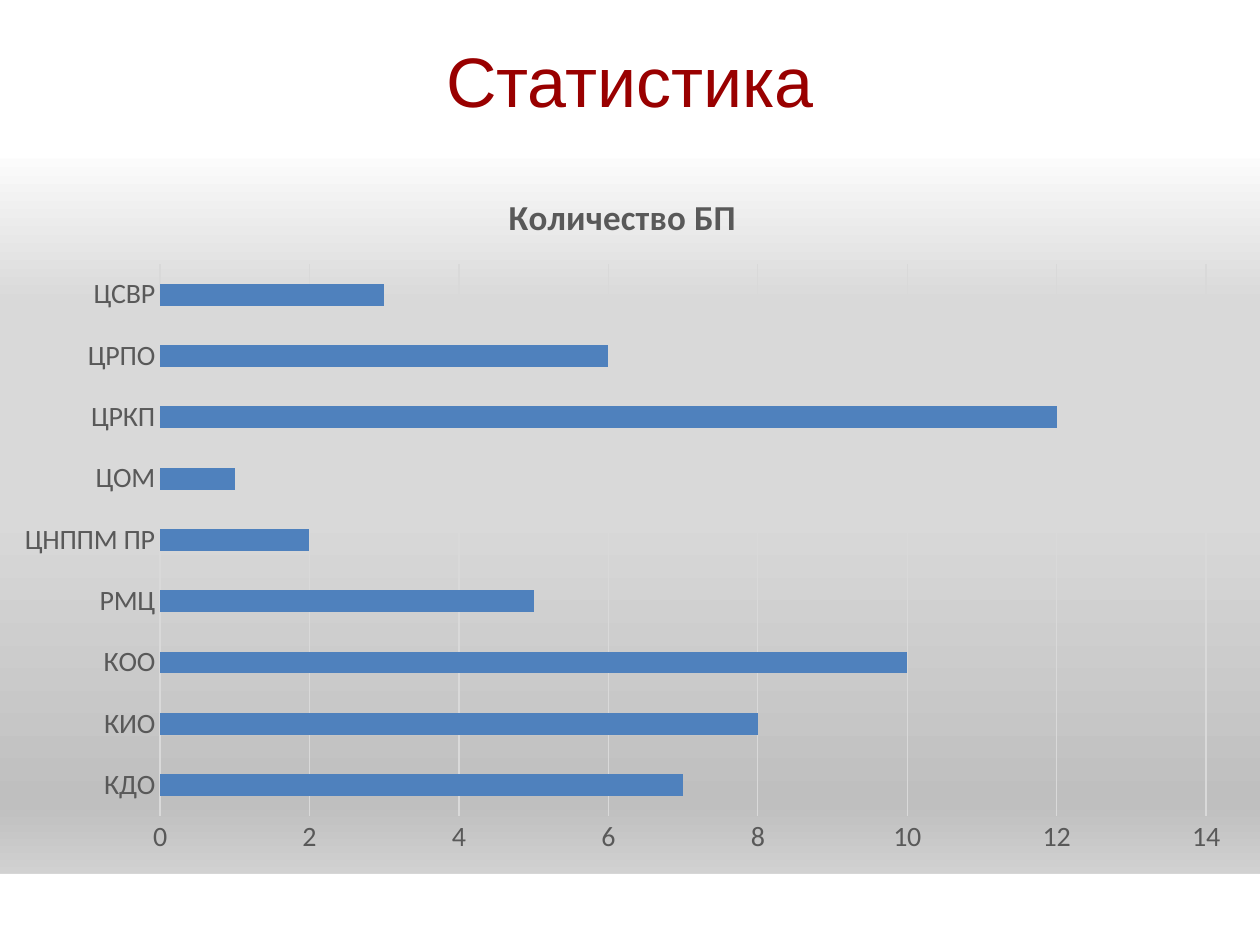
from lxml.etree import SubElement
from pptx import Presentation
from pptx.chart.data import CategoryChartData
from pptx.dml.color import RGBColor
from pptx.enum.chart import XL_CHART_TYPE as ChartType, XL_TICK_MARK as TickMark
from pptx.enum.shapes import MSO_SHAPE as Shape
from pptx.enum.text import MSO_ANCHOR as Anchor, PP_ALIGN as Align
from pptx.oxml import parse_xml
from pptx.oxml.ns import nsdecls, qn
from pptx.util import Pt

PX = 914400 / 126
WHITE = RGBColor(0xFF, 0xFF, 0xFF)
DARK_RED = RGBColor(0x99, 0x00, 0x00)
BLUE = RGBColor(0x4F, 0x81, 0xBD)
GREY_TEXT = RGBColor(0x59, 0x59, 0x59)
GRID_GREY = RGBColor(0xD9, 0xD9, 0xD9)
SILVER = RGBColor(0xBF, 0xBF, 0xBF)
PALE_GREY = RGBColor(0xE6, 0xE6, 0xE6)

BACKGROUND_STOPS = [(0, WHITE), (15, WHITE), (32, GRID_GREY),
                    (54, GRID_GREY), (85, SILVER), (100, PALE_GREY)]
PROGRAMS = {"КДО": 7, "КИО": 8, "КОО": 10, "РМЦ": 5, "ЦНППМ ПР": 2,
            "ЦОМ": 1, "ЦРКП": 12, "ЦРПО": 6, "ЦСВР": 3}


def px(*lengths):
    return [round(length * PX) for length in lengths]


def set_background(slide, stops):
    """Fill the background with a gradient running from top to bottom."""
    fill = slide.background.fill
    fill.gradient()
    fill.gradient_angle = 270
    stop_list = next(slide.element.iter(qn("a:gsLst")))
    for old_stop in list(stop_list):
        stop_list.remove(old_stop)
    for percent, color in stops:
        stop = SubElement(stop_list, qn("a:gs"), pos=str(percent * 1000))
        SubElement(stop, qn("a:srgbClr"), val=str(color))


def add_band(slide, *box):
    band = slide.shapes.add_shape(Shape.RECTANGLE, *px(*box))
    band.shadow.inherit = False
    band.fill.solid()
    band.fill.fore_color.rgb = WHITE
    band.line.fill.background()
    return band


def add_title(band, text):
    frame = band.text_frame
    frame.word_wrap = True
    frame.vertical_anchor = Anchor.MIDDLE
    heading = frame.paragraphs[0]
    heading.alignment = Align.CENTER
    run = heading.add_run()
    run.text = text
    style_font(run.font, 40, DARK_RED, "Arial")
    outline = parse_xml(
        f'<a:ln {nsdecls("a")} w="9525"><a:solidFill>'
        f'<a:srgbClr val="{DARK_RED}"/></a:solidFill></a:ln>')
    run.font._element.insert(0, outline)


def style_font(font, size, color, name="Calibri", bold=False):
    font.size = Pt(size)
    font.name = name
    font.bold = bold
    font.color.rgb = color


def style_line(line):
    line.color.rgb = GRID_GREY
    line.width = Pt(0.75)


def style_axis(axis):
    axis.major_tick_mark = axis.minor_tick_mark = TickMark.NONE
    style_font(axis.tick_labels.font, 16, GREY_TEXT)


def add_bar_chart(slide, title, values, *box):
    data = CategoryChartData()
    data.categories = list(values)
    data.add_series(title, list(values.values()))
    chart = slide.shapes.add_chart(
        ChartType.BAR_CLUSTERED, *px(*box), data).chart
    chart.has_legend = False
    style_font(chart.font, 16, GREY_TEXT)

    chart.has_title = True
    run = chart.chart_title.text_frame.paragraphs[0].add_run()
    run.text = title
    style_font(run.font, 20, GREY_TEXT, bold=True)
    chart.chart_title.include_in_layout = False

    categories, counts = chart.category_axis, chart.value_axis
    style_axis(categories)
    style_line(categories.format.line)
    style_axis(counts)
    counts.format.line.fill.background()
    counts.has_major_gridlines = True
    style_line(counts.major_gridlines.format.line)

    plot = chart.plots[0]
    plot.gap_width = 182
    plot.vary_by_categories = False
    bars = plot.series[0]
    bars.format.fill.solid()
    bars.format.fill.fore_color.rgb = BLUE


def main():
    deck = Presentation()
    deck.slide_width, deck.slide_height = px(1260, 945)
    slide = deck.slides.add_slide(deck.slide_layouts[6])
    set_background(slide, BACKGROUND_STOPS)
    add_band(slide, 0, 874, 1261, 73)
    add_title(add_band(slide, 0, 0, 1260, 158), "Статистика")
    add_bar_chart(slide, "Количество БП", PROGRAMS, 0, 165, 1245, 704)
    deck.save("out.pptx")


if __name__ == "__main__":
    main()
